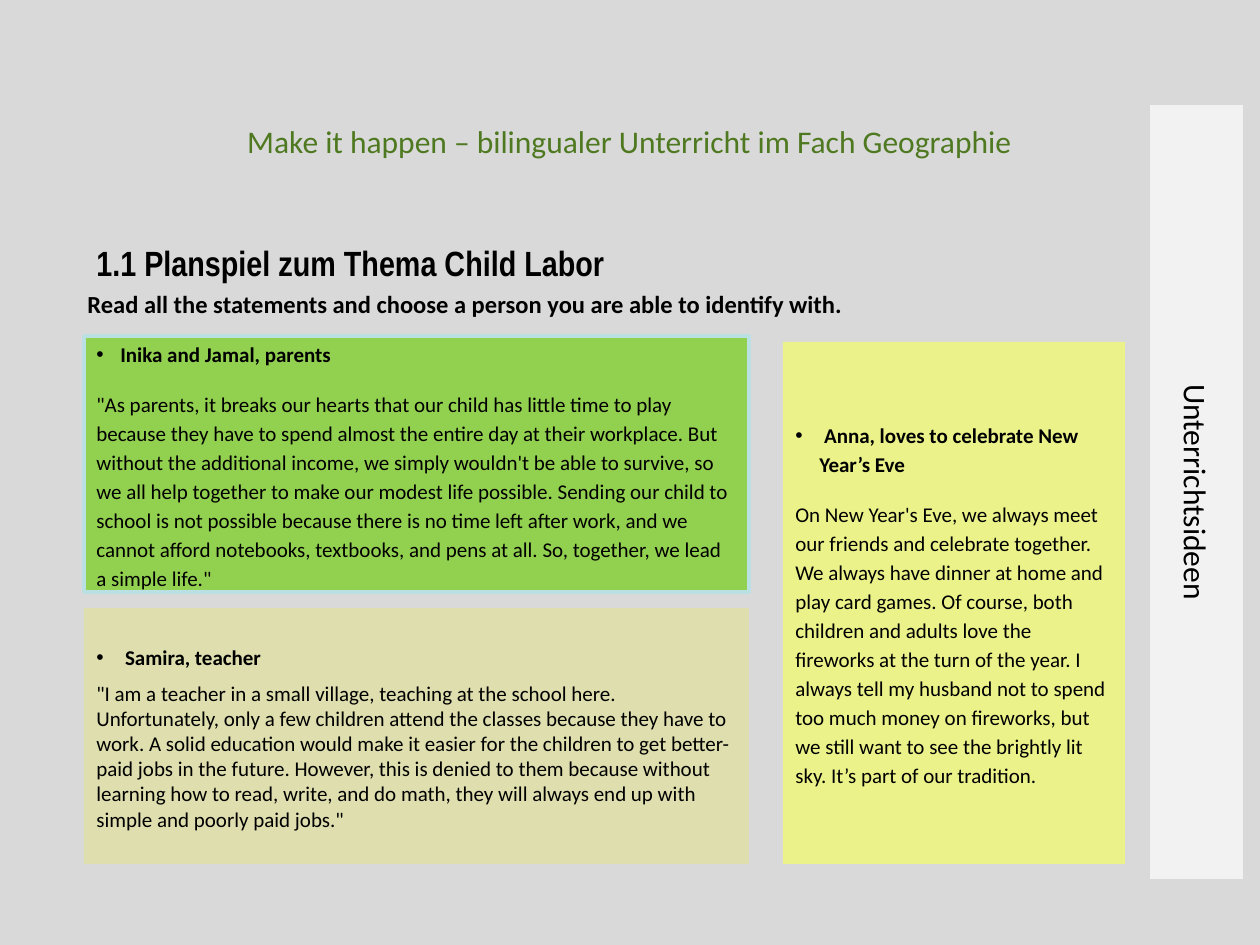
from pptx import Presentation
from pptx.dml.color import RGBColor
from pptx.enum.shapes import MSO_SHAPE as Shape
from pptx.enum.text import MSO_ANCHOR as Anchor, PP_ALIGN as Align
from pptx.oxml.ns import qn
from pptx.util import Emu, Pt
from lxml import etree

PX = 914400 / 126
COLORS = {
    "background": "D9D9D9", "sidebar": "F2F2F2", "text": "000000",
    "header": "4F7921", "parents": "92D050", "parents_line": "BBE0E3",
    "teacher": "DEDEAE", "anna": "EBF28A",
}


def px(*lengths):
    return [Emu(round(length * PX)) for length in lengths]


def add_run(paragraph, text, size, bold=False, font="Calibri", color="text"):
    run = paragraph.add_run()
    run.text = text
    run.font.size = Pt(size)
    run.font.bold = bold
    run.font.name = font
    run.font.color.rgb = RGBColor.from_string(COLORS[color])


prs = Presentation()
prs.slide_width, prs.slide_height = px(1260, 945)
slide = prs.slides.add_slide(prs.slide_layouts[6])
slide.background.fill.solid()
slide.background.fill.fore_color.rgb = RGBColor.from_string(COLORS["background"])

# Sidebar with rotated label
sidebar = slide.shapes.add_shape(Shape.RECTANGLE, *px(1150, 105, 93, 774))
sidebar.shadow.inherit = False
sidebar.fill.solid()
sidebar.fill.fore_color.rgb = RGBColor.from_string(COLORS["sidebar"])
sidebar.line.fill.background()
label = sidebar.text_frame
label.vertical_anchor = Anchor.MIDDLE
label._txBody.bodyPr.set("vert", "vert")
label.paragraphs[0].alignment = Align.CENTER
add_run(label.paragraphs[0], "Unterrichtsideen", 18)

# Header, section title and task
headings = [
    ((84, 214, 630, 68), "1.1 Planspiel zum Thema Child Labor",
     20, True, "Arial Narrow", "text", Align.LEFT, 1.5),
    ((67, 116, 1125, 50), "Make it happen – bilingualer Unterricht im Fach Geographie",
     18, False, "Calibri", "header", Align.CENTER, 1.0),
    ((75, 283, 1041, 59),
     "Read all the statements and choose a person you are able to identify with.",
     14, True, "Calibri", "text", Align.LEFT, 1.0),
]
for place, text, size, bold, font, color, align, spacing in headings:
    heading = slide.shapes.add_textbox(*px(*place)).text_frame
    heading.word_wrap = True
    heading.paragraphs[0].alignment = align
    heading.paragraphs[0].line_spacing = spacing
    add_run(heading.paragraphs[0], text, size, bold, font, color)

# Statement cards: place, colour, person, statement, statement spacing
cards = [
    ((84, 336, 665, 256), "parents", "Inika and Jamal, parents",
     "\"As parents, it breaks our hearts that our child has little time to play "
     "because they have to spend almost the entire day at their workplace. But "
     "without the additional income, we simply wouldn't be able to survive, so "
     "we all help together to make our modest life possible. Sending our child "
     "to school is not possible because there is no time left after work, and "
     "we cannot afford notebooks, textbooks, and pens at all. So, together, we "
     "lead a simple life.\"", True),
    ((84, 608, 665, 256), "teacher", " Samira, teacher",
     "\"I am a teacher in a small village, teaching at the school here. "
     "Unfortunately, only a few children attend the classes because they have "
     "to work. A solid education would make it easier for the children to get "
     "better-paid jobs in the future. However, this is denied to them because "
     "without learning how to read, write, and do math, they will always end "
     "up with simple and poorly paid jobs.\"", False),
    ((783, 342, 342, 522), "anna", " Anna, loves to celebrate New Year’s Eve",
     "On New Year's Eve, we always meet our friends and celebrate together. We "
     "always have dinner at home and play card games. Of course, both children "
     "and adults love the fireworks at the turn of the year. I always tell my "
     "husband not to spend too much money on fireworks, but we still want to "
     "see the brightly lit sky. It’s part of our tradition.", True),
]
for place, color, person, statement, spaced in cards:
    card = slide.shapes.add_shape(Shape.RECTANGLE, *px(*place))
    card.shadow.inherit = False
    card.fill.solid()
    card.fill.fore_color.rgb = RGBColor.from_string(COLORS[color])
    if color == "parents":
        card.line.color.rgb = RGBColor.from_string(COLORS["parents_line"])
        card.line.width = Pt(2)
    else:
        card.line.fill.background()

    frame = card.text_frame
    frame.word_wrap = True
    frame.vertical_anchor = Anchor.MIDDLE

    name = frame.paragraphs[0]
    indent, = px(24)
    props = name._p.get_or_add_pPr()
    props.set("marL", str(indent))
    props.set("indent", str(-indent))
    etree.SubElement(props, qn("a:buFont")).set("typeface", "Arial")
    etree.SubElement(props, qn("a:buChar")).set("char", "•")
    name.alignment = Align.LEFT
    name.line_spacing = 1.15
    name.space_after = Pt(6)
    add_run(name, person, 12, bold=True)

    quote = frame.add_paragraph()
    quote.alignment = Align.LEFT
    if spaced:
        quote.line_spacing = 1.15
        quote.space_before = quote.space_after = Pt(6)
    add_run(quote, statement, 12)

prs.save("out.pptx")
